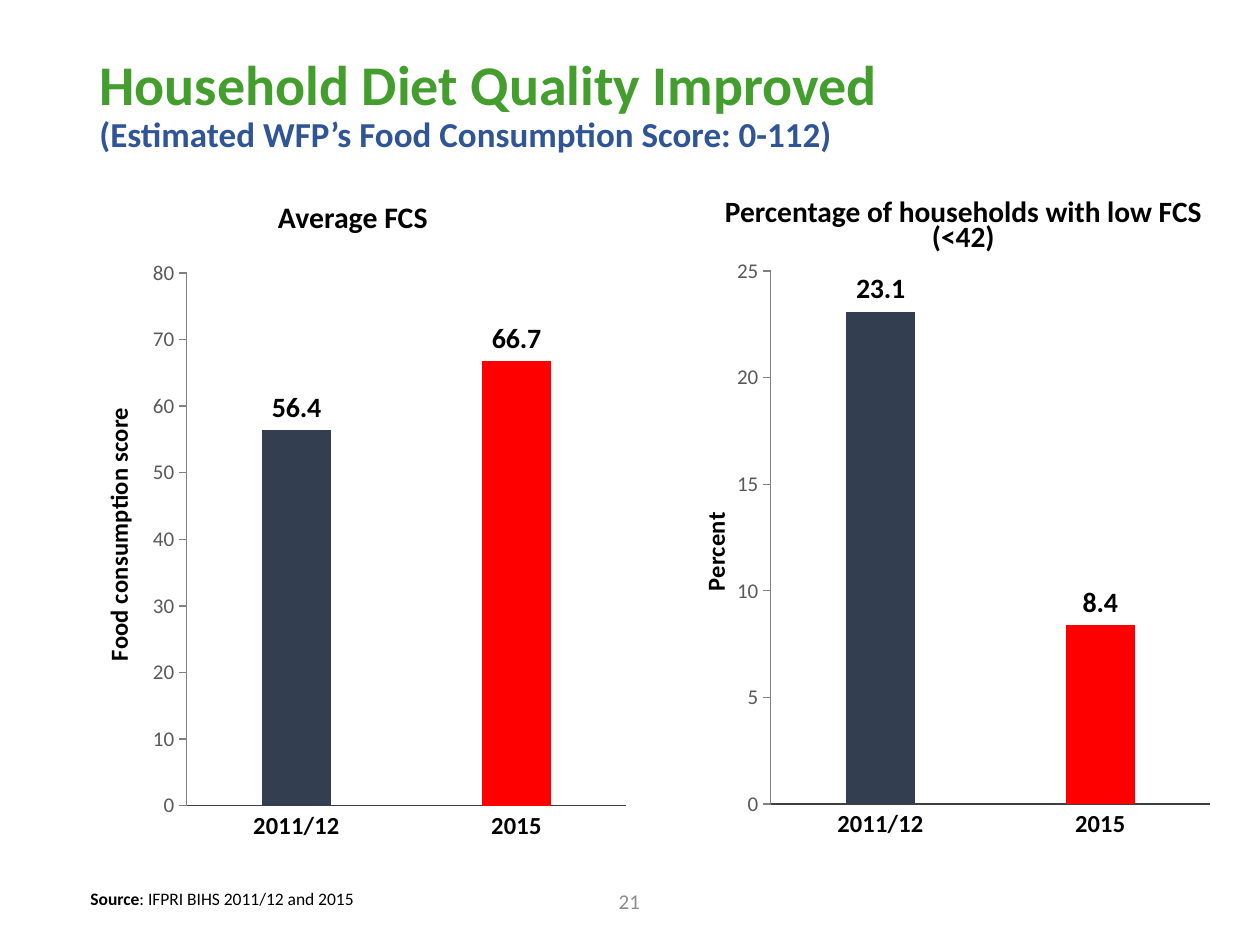
from lxml import etree
from pptx import Presentation
from pptx import util as u
from pptx.chart.data import CategoryChartData
from pptx.dml.color import RGBColor
from pptx.enum import chart as ch, text
from pptx.oxml import ns

FONT = "Calibri"
COLORS = {"green": "439E2E", "blue": "2F5597", "black": "000000", "grey": "595959",
          "light": "8C8C8C", "navy": "333F50", "red": "FF0000",
          "axis": "404040", "scale": "808080"}


def style(font, size, color="black", bold=False):
    for name, value in {"name": FONT, "size": u.Pt(size), "bold": bold}.items():
        setattr(font, name, value)
    font.color.rgb = RGBColor.from_string(COLORS[color])


def layout(**parts):
    """Return a manual chart layout measured in fractions of the chart."""
    el = etree.Element(ns.qn("c:layout"))
    manual = etree.SubElement(el, ns.qn("c:manualLayout"))
    for tag, value in parts.items():
        etree.SubElement(manual, ns.qn("c:" + tag)).set("val", str(value))
    return el


prs = Presentation()
prs.slide_width, prs.slide_height = u.Inches(10), u.Inches(7.5)
s = prs.slides.add_slide(prs.slide_layouts[6])

LEFT, CENTER = text.PP_ALIGN.LEFT, text.PP_ALIGN.CENTER
TOP, MIDDLE, BOTTOM = text.MSO_ANCHOR.TOP, text.MSO_ANCHOR.MIDDLE, text.MSO_ANCHOR.BOTTOM

# box, alignment, anchor, line spacing, runs (None is a line break)
texts = [
    ((0.69, 0, 8.62, 1.68), LEFT, MIDDLE, 0.9, [
        ("Household Diet Quality Improved", 32, "green", True), None,
        ("(Estimated WFP’s Food Consumption Score: 0-112)", 20, "blue", True)]),
    ((0.59, 1.42, 4.42, 0.49), CENTER, BOTTOM, 0.9,
     [("Average FCS", 17, "black", True)]),
    ((5.52, 1.51, 4.25, 0.54), CENTER, BOTTOM, 0.7,
     [("Percentage of households with low FCS (<42)", 16.8, "black", True)]),
    ((0.62, 7, 7.27, 0.27), LEFT, TOP, 1.0, [
        ("Source", 10, "black", True),
        (": IFPRI BIHS 2011/12 and 2015", 10, "black", False)]),
    ((3.87, 6.95, 2.25, 0.4), CENTER, MIDDLE, 1.0, [("21", 12, "light", False)]),
]
for box, align, anchor, spacing, runs in texts:
    tf = s.shapes.add_textbox(*map(u.Inches, box)).text_frame
    tf.word_wrap, tf.vertical_anchor = True, anchor
    p = tf.paragraphs[0]
    p.alignment, p.line_spacing = align, spacing
    for run in runs:
        if run is None:
            p.add_line_break()
            continue
        r = p.add_run()
        r.text = run[0]
        style(r.font, *run[1:])

# left, values, axis title, title position, axis maximum, axis step, plot position
charts = [
    (0.61, (56.4, 66.7), "Food consumption score", (0.036, 0.237), 80, 10, (0.197, 0.024)),
    (5.19, (23.1, 8.4), "Percent", (0.072, 0.408), 25, 5, (0.21, 0.021)),
]
for left, values, title, title_xy, top, step, plot_xy in charts:
    data = CategoryChartData()
    data.categories = ["2011/12", "2015"]
    data.add_series(title, values)
    chart = s.shapes.add_chart(
        ch.XL_CHART_TYPE.COLUMN_CLUSTERED, u.Inches(left), u.Inches(2.05),
        u.Inches(4.42), u.Inches(4.85), data).chart
    chart.has_legend = chart.has_title = False
    style(chart.font, 10)

    plot = chart.plots[0]
    plot.gap_width, plot.overlap, plot.vary_by_categories = 219, -27, False
    for i, color in enumerate(("navy", "red")):
        fill = plot.series[0].points[i].format.fill
        fill.solid()
        fill.fore_color.rgb = RGBColor.from_string(COLORS[color])
    plot.has_data_labels = True
    labels = plot.data_labels
    for name, value in {"show_value": True, "number_format": "0.0",
                        "number_format_is_linked": False,
                        "position": ch.XL_LABEL_POSITION.OUTSIDE_END}.items():
        setattr(labels, name, value)
    style(labels.font, 16, bold=True)

    cat, val = chart.category_axis, chart.value_axis
    for axis, line, tick in ((cat, "axis", ch.XL_TICK_MARK.NONE),
                             (val, "scale", ch.XL_TICK_MARK.OUTSIDE)):
        axis.has_major_gridlines = False
        axis.major_tick_mark, axis.minor_tick_mark = tick, ch.XL_TICK_MARK.NONE
        axis.format.line.width = u.Pt(0.75)
        axis.format.line.color.rgb = RGBColor.from_string(COLORS[line])
    style(cat.tick_labels.font, 14, bold=True)
    style(val.tick_labels.font, 12, "grey")
    val.minimum_scale, val.maximum_scale, val.major_unit = 0, top, step
    val.tick_labels.number_format = "0"
    val.tick_labels.number_format_is_linked = False

    tf = val.axis_title.text_frame
    tf.text = title
    style(tf.paragraphs[0].runs[0].font, 14, bold=True)
    tf._txBody.find(ns.qn("a:bodyPr")).attrib.update({"rot": "-5400000", "vert": "horz"})

    x, y = title_xy
    title_layout = layout(xMode="edge", yMode="edge", x=x, y=y)
    x, y = plot_xy
    plot_layout = layout(layoutTarget="inner", xMode="edge", yMode="edge",
                         x=x, y=y, w=0.79, h=0.872)
    title_el = val.axis_title._element
    area = chart._chartSpace.chart.plotArea
    for parent, el, index in ((title_el, title_layout, 1), (area, plot_layout, 0)):
        for old in parent.findall(ns.qn("c:layout")):
            parent.remove(old)
        parent.insert(index, el)

prs.save("out.pptx")
